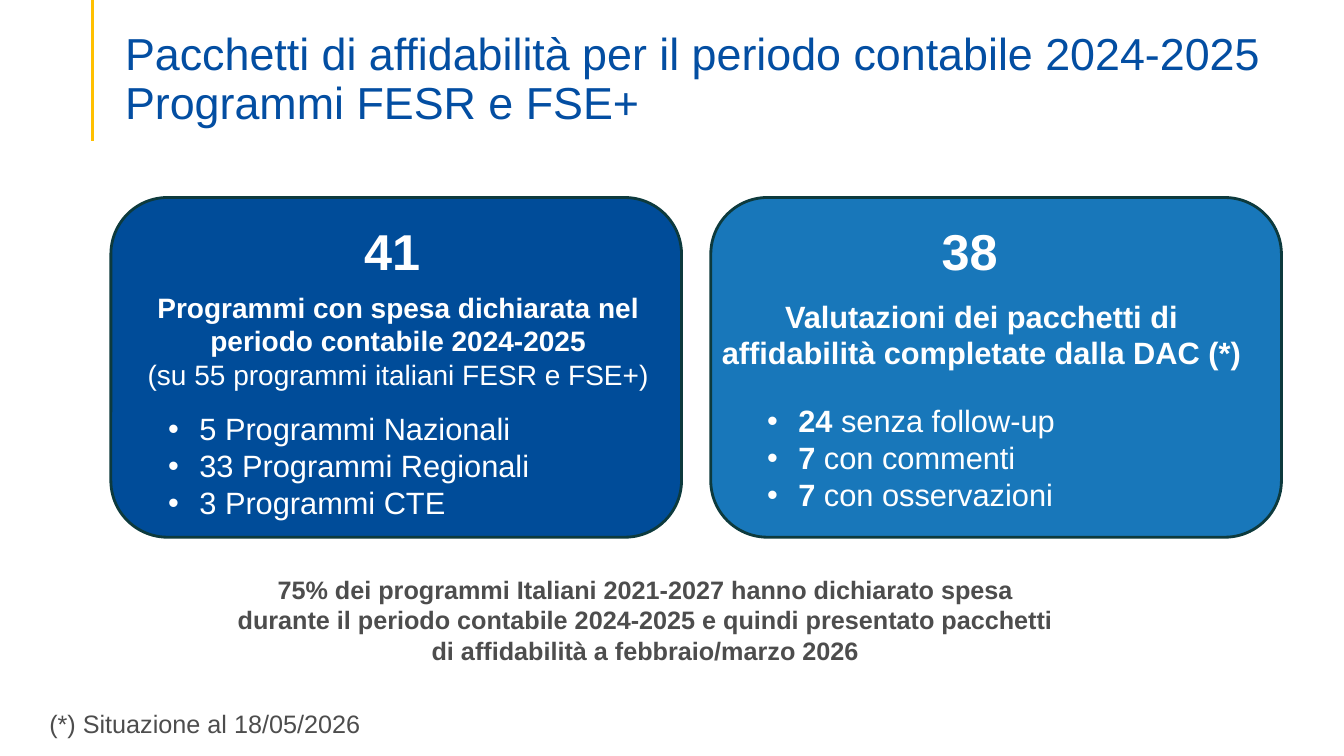
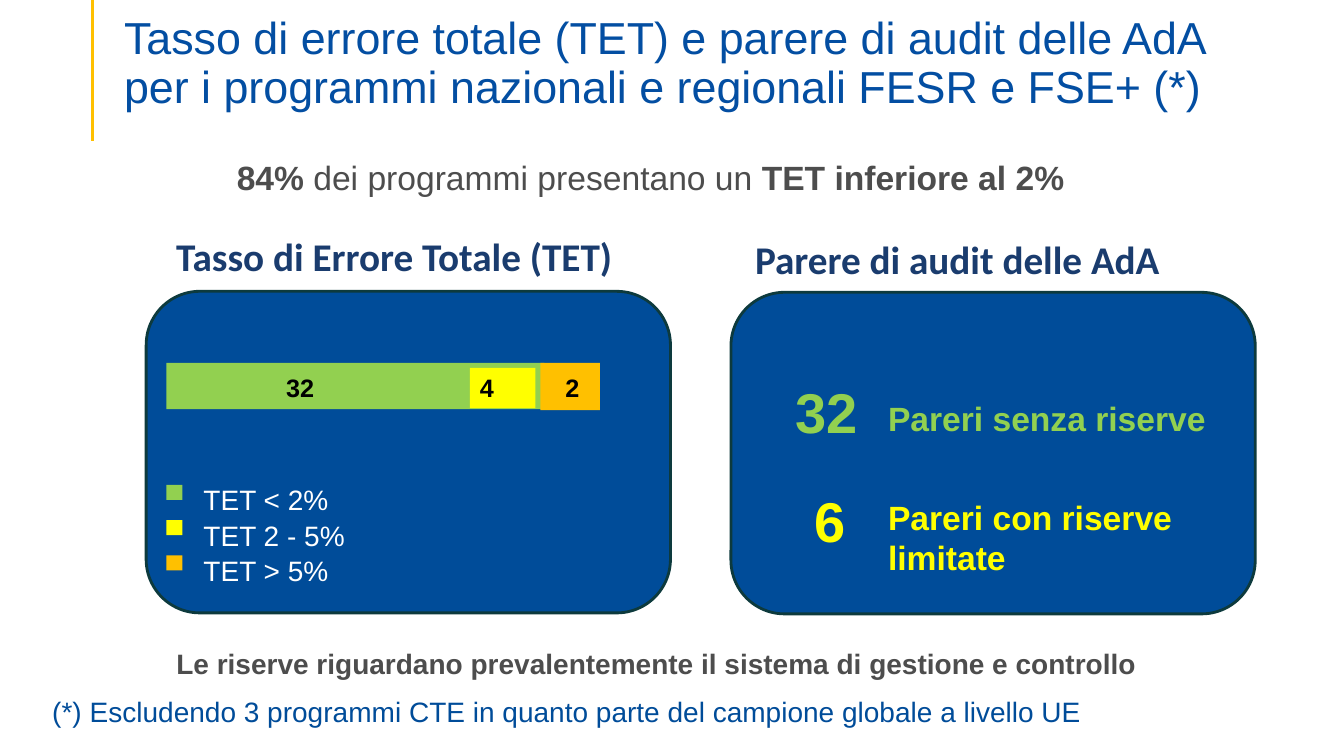
from lxml import etree
from pptx import Presentation
from pptx.dml.color import RGBColor
from pptx.enum.shapes import MSO_CONNECTOR, MSO_SHAPE
from pptx.enum.text import MSO_ANCHOR, MSO_AUTO_SIZE, PP_ALIGN
from pptx.oxml.ns import qn
from pptx.util import Inches, Pt

LEFT, CENTER = PP_ALIGN.LEFT, PP_ALIGN.CENTER
RECT, ROUNDED = MSO_SHAPE.RECTANGLE, MSO_SHAPE.ROUNDED_RECTANGLE

TITLE_BLUE = RGBColor(0x03, 0x4E, 0xA2)
NAVY = RGBColor(0x00, 0x4C, 0x99)
BLUE = RGBColor(0x18, 0x77, 0xBA)
HEADING = RGBColor(0x1A, 0x3C, 0x6E)
OUTLINE = RGBColor(0x0D, 0x3A, 0x3D)
GOLD = RGBColor(0xFF, 0xC0, 0x00)
GREEN = RGBColor(0x92, 0xD0, 0x50)
YELLOW = RGBColor(0xFF, 0xFF, 0x00)
GREY = RGBColor(0x4D, 0x4D, 0x4D)
WHITE = RGBColor(0xFF, 0xFF, 0xFF)
BLACK = RGBColor(0x00, 0x00, 0x00)

# Content: a paragraph is a list of (text, bold) runs
PACKAGES_TITLE = "Pacchetti di affidabilità per il periodo contabile 2024-2025\vProgrammi FESR e FSE+"
PROGRAMMES = [
    [("Programmi con spesa dichiarata nel periodo contabile 2024-2025", True)],
    [("(su 55 programmi italiani FESR e FSE+)", False)],
]
PROGRAMME_TYPES = [
    [("5 Programmi Nazionali", False)],
    [("33 Programmi Regionali", False)],
    [("3 Programmi CTE", False)],
]
ASSESSMENTS = [
    [("Valutazioni dei pacchetti di", True)],
    [("affidabilità completate dalla DAC (*)", True)],
]
OUTCOMES = [
    [("24 ", True), ("senza follow-up", False)],
    [("7 ", True), ("con commenti", False)],
    [("7 ", True), ("con osservazioni", False)],
]
SPENDING = [[("75% dei programmi Italiani 2021-2027 hanno dichiarato spesa durante il periodo "
              "contabile 2024-2025 e quindi presentato pacchetti di affidabilità a "
              "febbraio/marzo 2026", True)]]
STATUS_NOTE = [[("(*) Situazione al 18/05/2026", False)]]

ERROR_TITLE = ("Tasso di errore totale (TET) e parere di audit delle AdA\v"
               "per i programmi nazionali e regionali FESR e FSE+ (*)")
ERROR_SUMMARY = [[("84% ", True), ("dei programmi presentano un ", False),
                  ("TET inferiore al 2%", True)]]
# heading, left, top
HEADINGS = [("Tasso di Errore Totale (TET)", 1.65, 2.26),
            ("Parere di audit delle AdA", 7.39, 2.29)]
# left, top, width, height, colour
BAR = [(1.65, 3.6, 3.75, 0.46, GREEN),
       (4.66, 3.65, 0.65, 0.4, YELLOW),
       (5.36, 3.6, 0.59, 0.47, GOLD)]
# count, left
BAR_COUNTS = [("32", 2.74), ("4", 4.66), ("2", 5.51)]
LEGEND = [("TET < 2%", GREEN), ("TET 2 - 5%", YELLOW), ("TET > 5%", GOLD)]
# count, left, top, label, label top, colour
OPINIONS = [("32", 7.79, 3.7, "Pareri senza riserve", 3.9, GREEN),
            ("6", 7.98, 4.78, "Pareri con riserve limitate", 4.88, YELLOW)]
RESERVES = [[("Le riserve riguardano prevalentemente il sistema di gestione e controllo", True)]]
SCOPE_NOTE = [[("(*) Escludendo 3 programmi CTE in quanto parte del campione globale "
                "a livello UE", False)]]


def bold(text):
    return [[(text, True)]]


def style_run(r, size, color, is_bold=False, font="Arial"):
    r.font.name, r.font.size, r.font.bold = font, Pt(size), is_bold
    r.font.color.rgb = color


def add_bullet(p):
    pPr = p._p.get_or_add_pPr()
    pPr.set("marL", str(Inches(0.31)))
    pPr.set("indent", str(Inches(-0.31)))
    etree.SubElement(pPr, qn("a:buFont")).set("typeface", "Arial")
    etree.SubElement(pPr, qn("a:buChar")).set("char", "•")


def add_text(slide, box, paragraphs, size, color, align=LEFT, font="Arial", bullets=False):
    tf = slide.shapes.add_textbox(*map(Inches, box)).text_frame
    tf.word_wrap = True
    for i, runs in enumerate(paragraphs):
        p = tf.paragraphs[0] if i == 0 else tf.add_paragraph()
        p.alignment = align
        if bullets:
            add_bullet(p)
        for text, is_bold in runs:
            r = p.add_run()
            r.text = text
            style_run(r, size, color, is_bold, font)


def add_block(slide, box, fill, kind=RECT, outline=None):
    sp = slide.shapes.add_shape(kind, *map(Inches, box))
    sp.shadow.inherit = False
    sp.fill.solid()
    sp.fill.fore_color.rgb = fill
    if outline is None:
        sp.line.fill.background()
    else:
        sp.line.color.rgb = outline
        sp.line.width = Pt(2)


def add_layout_rule(slide):
    """Put the gold title rule on the layout that the slides share."""
    x = Inches(0.92)
    rule = slide.shapes.add_connector(MSO_CONNECTOR.STRAIGHT, x, 0, x, Inches(1.4))
    rule.line.color.rgb = GOLD
    rule.line.width = Pt(2.25)
    etree.SubElement(rule.element.spPr, qn("a:effectLst"))
    slide.slide_layout.shapes.element.append(rule.element)


def add_slide(prs, title, left, top, width):
    slide = prs.slides.add_slide(prs.slide_layouts[5])
    sp = slide.shapes.title
    sp.left, sp.top, sp.width, sp.height = map(Inches, (left, top, width, 0.86))
    tf = sp.text_frame
    tf.text = title
    tf.word_wrap = True
    tf.auto_size = MSO_AUTO_SIZE.NONE
    tf.vertical_anchor = MSO_ANCHOR.BOTTOM
    tf.margin_bottom = 0
    p = tf.paragraphs[0]
    p.alignment = LEFT
    p.line_spacing = 0.9
    for r in p.runs:
        style_run(r, 32, TITLE_BLUE)
    return slide


def build_packages(prs):
    s = add_slide(prs, PACKAGES_TITLE, 1.14, 0.42, 11.77)
    add_layout_rule(s)
    for i, fill in enumerate((NAVY, BLUE)):
        add_block(s, (1.1 + 5.95 * i, 1.96, 5.66, 3.37), fill, ROUNDED, OUTLINE)

    # Left panel
    add_text(s, (3.35, 2.13, 1.08, 0.71), bold("41"), 36, WHITE, CENTER)
    add_text(s, (1.14, 2.83, 5.62, 1.75), PROGRAMMES, 20, WHITE, CENTER)
    add_text(s, (1.57, 4.02, 4.34, 1.51), PROGRAMME_TYPES, 22, WHITE, bullets=True)

    # Right panel
    add_text(s, (9.24, 2.13, 1.14, 0.71), bold("38"), 36, WHITE)
    add_text(s, (6.8, 2.9, 5.87, 1.14), ASSESSMENTS, 22, WHITE, CENTER)
    add_text(s, (7.51, 3.94, 3.12, 1.21), OUTCOMES, 22, WHITE, bullets=True)

    # Conclusion and note
    add_text(s, (2.17, 5.65, 8.46, 1.01), SPENDING, 18, GREY, CENTER)
    add_text(s, (0.39, 6.98, 3.48, 0.4), STATUS_NOTE, 18, GREY)


def build_error_rate(prs):
    s = add_slide(prs, ERROR_TITLE, 1.13, 0.26, 11.5)
    add_text(s, (2.25, 1.51, 9.55, 0.5), ERROR_SUMMARY, 24, GREY)
    for i, (heading, left, top) in enumerate(HEADINGS):
        add_text(s, (left, top, 4.57, 0.57), bold(heading), 28, HEADING, font="Calibri")
        add_block(s, (1.45 + 5.8 * i, 2.89 + 0.01 * i, 5.2, 3.19), NAVY, ROUNDED, OUTLINE)

    # Error rate bar and legend
    for *box, fill in BAR:
        add_block(s, box, fill)
    for count, left in BAR_COUNTS:
        add_text(s, (left, 3.64, 0.59, 0.4), bold(count), 18, BLACK)
    for i, (label, fill) in enumerate(LEGEND):
        offset = 0.35 * i
        add_block(s, (1.65, 4.81 + offset, 0.16, 0.15), fill)
        add_text(s, (1.92, 4.74 + offset, 1.83, 0.44), [[(label, False)]], 20, WHITE)

    # Audit opinions
    for count, left, top, label, label_top, color in OPINIONS:
        add_text(s, (left, top, 1.06, 0.77), bold(count), 40, color)
        add_text(s, (8.71, label_top, 3.6, 0.91), bold(label), 24, color)

    # Conclusion and note
    add_text(s, (1.65, 6.36, 10.31, 0.44), RESERVES, 20, GREY)
    add_text(s, (0.42, 6.84, 10.46, 0.44), SCOPE_NOTE, 20, NAVY)


def main():
    prs = Presentation()
    prs.slide_width, prs.slide_height = Inches(13.33), Inches(7.5)
    build_packages(prs)
    build_error_rate(prs)
    prs.save("out.pptx")


if __name__ == "__main__":
    main()
